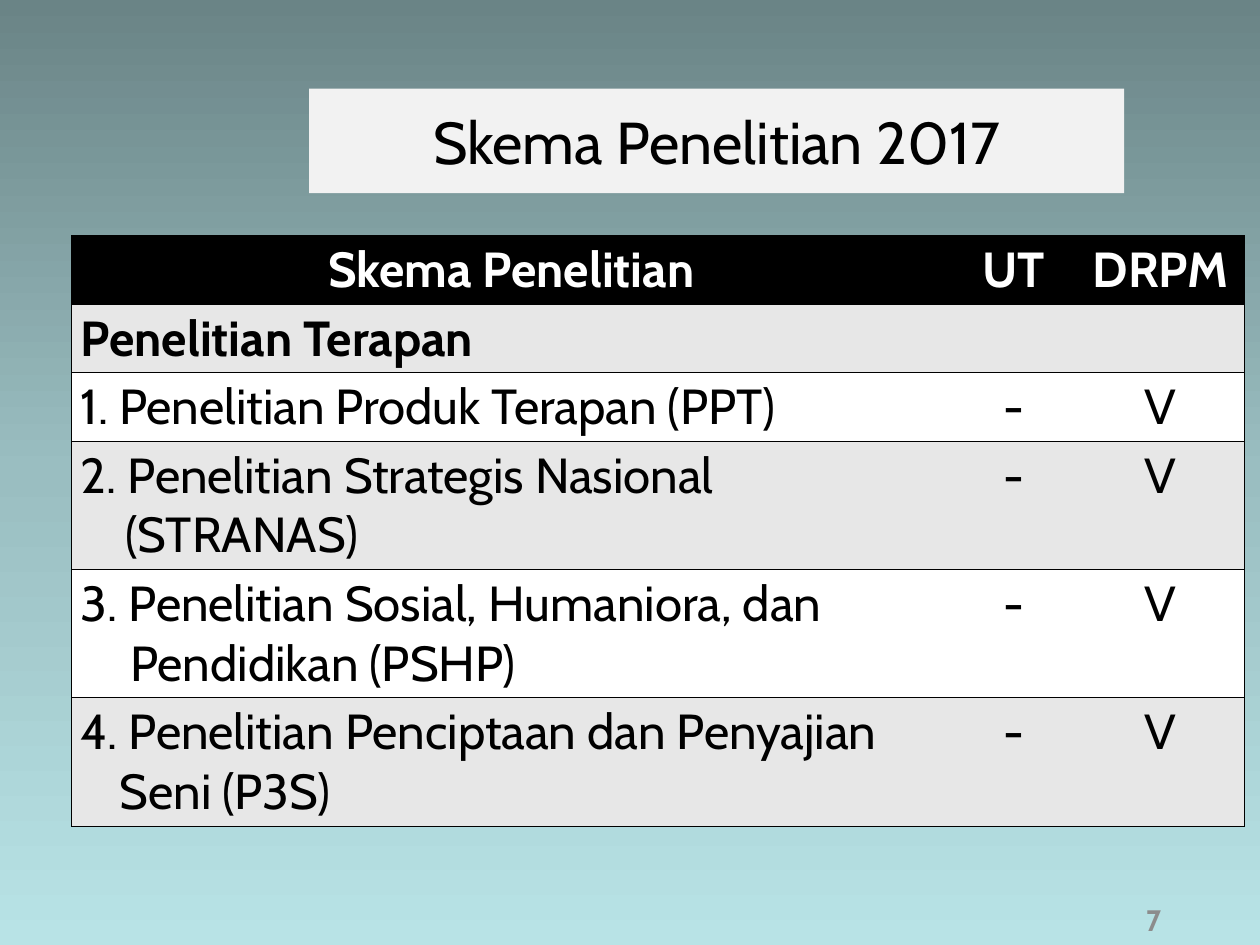
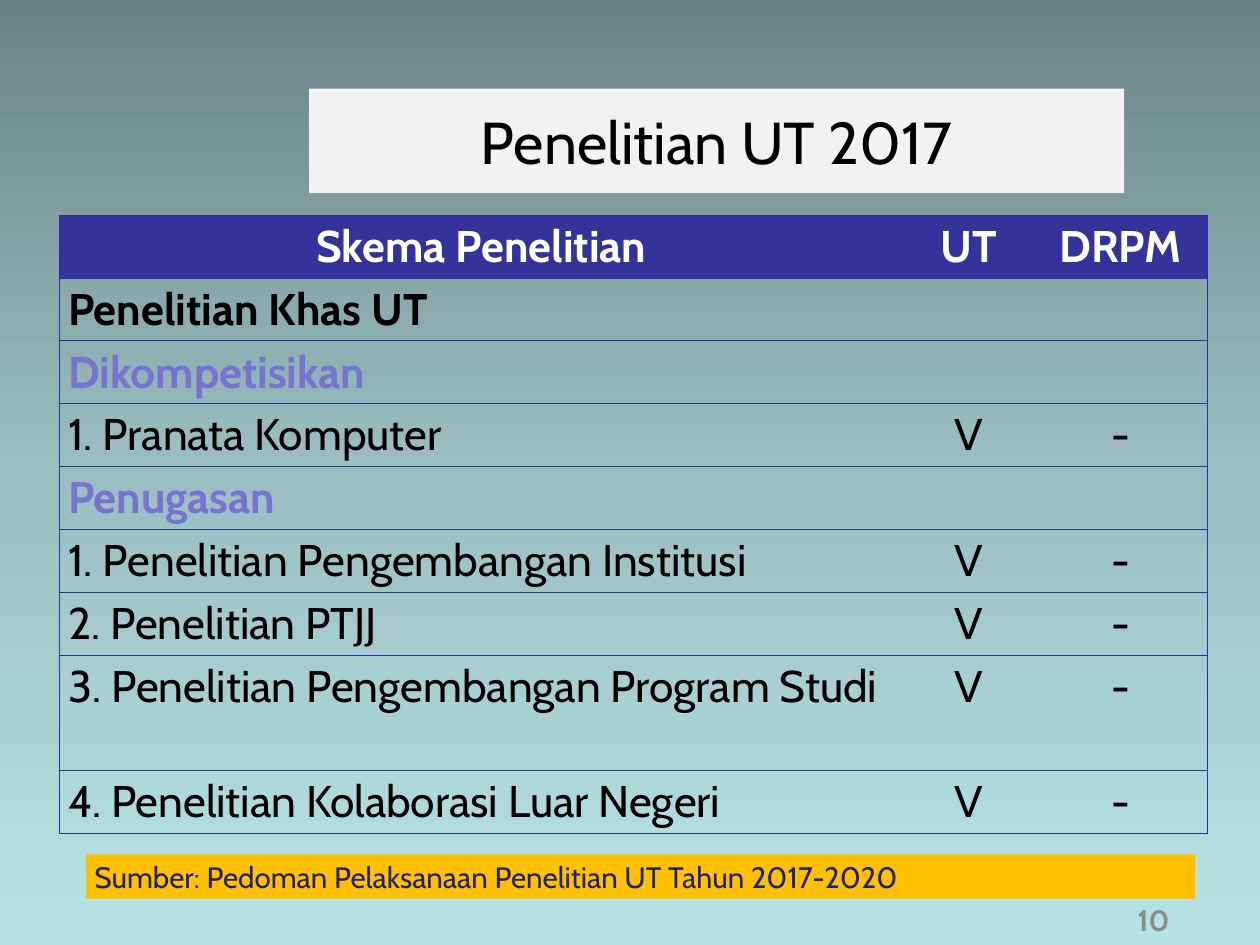
from copy import deepcopy
from dataclasses import dataclass

from lxml.etree import SubElement
from pptx import Presentation
from pptx.dml.color import RGBColor
from pptx.enum.shapes import MSO_SHAPE
from pptx.enum.text import MSO_ANCHOR, PP_ALIGN
from pptx.oxml.ns import qn
from pptx.util import Cm, Pt


@dataclass(frozen=True)
class Theme:
    font: str = "Cabin"
    sky: tuple = ((0, "6A8486"), (0.5, "9ABEC1"), (1, "B8E3E6"))
    panel: str = "F2F2F2"
    ink: str = "000000"
    paper: str = "FFFFFF"
    band: str = "E7E7E7"
    blue: str = "333399"
    line: str = "2F2F98"
    violet: str = "7575D1"
    amber: str = "FFC000"
    navy: str = "222267"
    grey: str = "8C8C8C"
    title: int = 48
    note: int = 24


theme = Theme()
PLAIN = "{2D5ABB26-0587-4C30-8999-92F81FD0307C}"  # table style without fills or grid
CENTER, LEFT = PP_ALIGN.CENTER, PP_ALIGN.LEFT


def write(frame, text, size, color, bold=False, align=CENTER):
    frame.text = text
    para = frame.paragraphs[0]
    para.alignment = align
    font = para.runs[0].font
    font.name, font.size, font.bold = theme.font, Pt(size), bold
    font.color.rgb = RGBColor.from_string(color)


def panel(slide, place, fill=None):
    """Add a borderless, vertically centred box and return its text frame."""
    box = slide.shapes.add_shape(MSO_SHAPE.RECTANGLE, *map(Cm, place))
    box.shadow.inherit = False
    box.line.fill.background()
    if fill:
        box.fill.solid()
        box.fill.fore_color.rgb = RGBColor.from_string(fill)
    else:
        box.fill.background()
    box.text_frame.word_wrap = True
    box.text_frame.vertical_anchor = MSO_ANCHOR.MIDDLE
    return box.text_frame


# Rows hold text, UT mark, DRPM mark and hanging indent in cm.
HEAD = ("Skema Penelitian", "UT", "DRPM", 0)
pages = [
    dict(
        title="Skema Penelitian 2017", number="7", source=None,
        spot=(2.06, 6.76), cols=(25.2, 3.61, 4.8), size=40,
        low=1.96, tall=3.63, head=theme.ink, bands=(theme.band, theme.paper),
        line=theme.ink, weight=1, groups=(),
        rows=[
            HEAD,
            ("Penelitian Terapan", "", "", 0),
            ("1. Penelitian Produk Terapan (PPT)", "-", "V", 0),
            ("2. Penelitian Strategis Nasional (STRANAS)", "-", "V", 1.27),
            ("3. Penelitian Sosial, Humaniora, dan Pendidikan (PSHP)", "-", "V", 1.42),
            ("4. Penelitian Penciptaan dan Penyajian Seni (P3S)", "-", "V", 1.12),
        ],
    ),
    dict(
        title="Penelitian UT 2017", number="10",
        source="Sumber: Pedoman Pelaksanaan Penelitian UT Tahun 2017-2020",
        spot=(1.7, 6.17), cols=(24.2, 3.73, 4.98), size=36,
        low=1.8, tall=3.3, head=theme.blue, bands=(None, None),
        line=theme.line, weight=0.75, groups=("Dikompetisikan", "Penugasan"),
        rows=[
            HEAD,
            ("Penelitian Khas UT", "", "", 0),
            ("Dikompetisikan", "", "", 0),
            ("1. Pranata Komputer", "V", "-", 0),
            ("Penugasan", "", "", 0),
            ("1. Penelitian Pengembangan Institusi", "V", "-", 0),
            ("2. Penelitian PTJJ", "V", "-", 0),
            ("3. Penelitian Pengembangan Program Studi", "V", "-", 1.42),
            ("4. Penelitian Kolaborasi Luar Negeri", "V", "-", 0),
        ],
    ),
]

deck = Presentation()
deck.slide_width, deck.slide_height = Cm(36.12), Cm(27.09)

# The master carries the background for every slide.
master = deck.slide_master
sky = master.background.fill
sky.gradient()
sky.gradient_angle = 270
stops = master.element.find(".//" + qn("a:gsLst"))
stops.append(deepcopy(stops[0]))
for stop, (place, color) in zip(sky.gradient_stops, theme.sky):
    stop.position = place
    stop.color.rgb = RGBColor.from_string(color)

for page in pages:
    slide = deck.slides.add_slide(deck.slide_layouts[6])

    frame = panel(slide, (8.86, 2.54, 23.37, 3), theme.panel)
    frame.margin_left = frame.margin_right = Cm(0.15)
    frame.margin_top = frame.margin_bottom = Cm(0.15)
    write(frame, page["title"], theme.title, theme.ink)

    rows, cols = page["rows"], page["cols"]
    highs = [page["tall"] if row[3] else page["low"] for row in rows]
    grid = slide.shapes.add_table(
        len(rows), len(cols), *map(Cm, (*page["spot"], sum(cols), sum(highs))))
    table = grid.table
    grid.element.find(".//" + qn("a:tableStyleId")).text = PLAIN
    for col, width in zip(table.columns, cols):
        col.width = Cm(width)

    for r, (*texts, hang) in enumerate(rows):
        table.rows[r].height = Cm(highs[r])
        fill = page["bands"][(r - 1) % 2] if r else page["head"]
        color = theme.violet if texts[0] in page["groups"] else theme.ink
        bold = r == 0 or not texts[1]
        for c, text in enumerate(texts):
            cell = table.cell(r, c)
            if fill:
                cell.fill.solid()
                cell.fill.fore_color.rgb = RGBColor.from_string(fill)
            else:
                cell.fill.background()
            if text:
                write(cell.text_frame, text, page["size"],
                      color if r else theme.paper, bold,
                      CENTER if c or r == 0 else LEFT)
            if hang and c == 0:
                props = cell.text_frame.paragraphs[0]._p.get_or_add_pPr()
                props.set("marL", str(Cm(hang)))
                props.set("indent", str(-Cm(hang)))

            # Rules run across every row; uprights only at the outer edges.
            sides = ["lnL"] * (c == 0) + ["lnR"] * (c == len(cols) - 1) + ["lnT", "lnB"]
            props = cell._tc.get_or_add_tcPr()
            for i, side in enumerate(sides):
                edge = SubElement(props, qn("a:" + side), w=str(Pt(page["weight"])))
                paint = SubElement(edge, qn("a:solidFill"))
                SubElement(paint, qn("a:srgbClr"), val=page["line"])
                props.insert(i, edge)

    if page["source"]:
        frame = panel(slide, (2.46, 24.49, 31.8, 1.27), theme.amber)
        write(frame, page["source"], theme.note, theme.navy, align=LEFT)

    frame = panel(slide, (30.07, 25.65, 6, 1.44))
    write(frame, page["number"], theme.note, theme.grey, bold=True)

deck.save("out.pptx")
